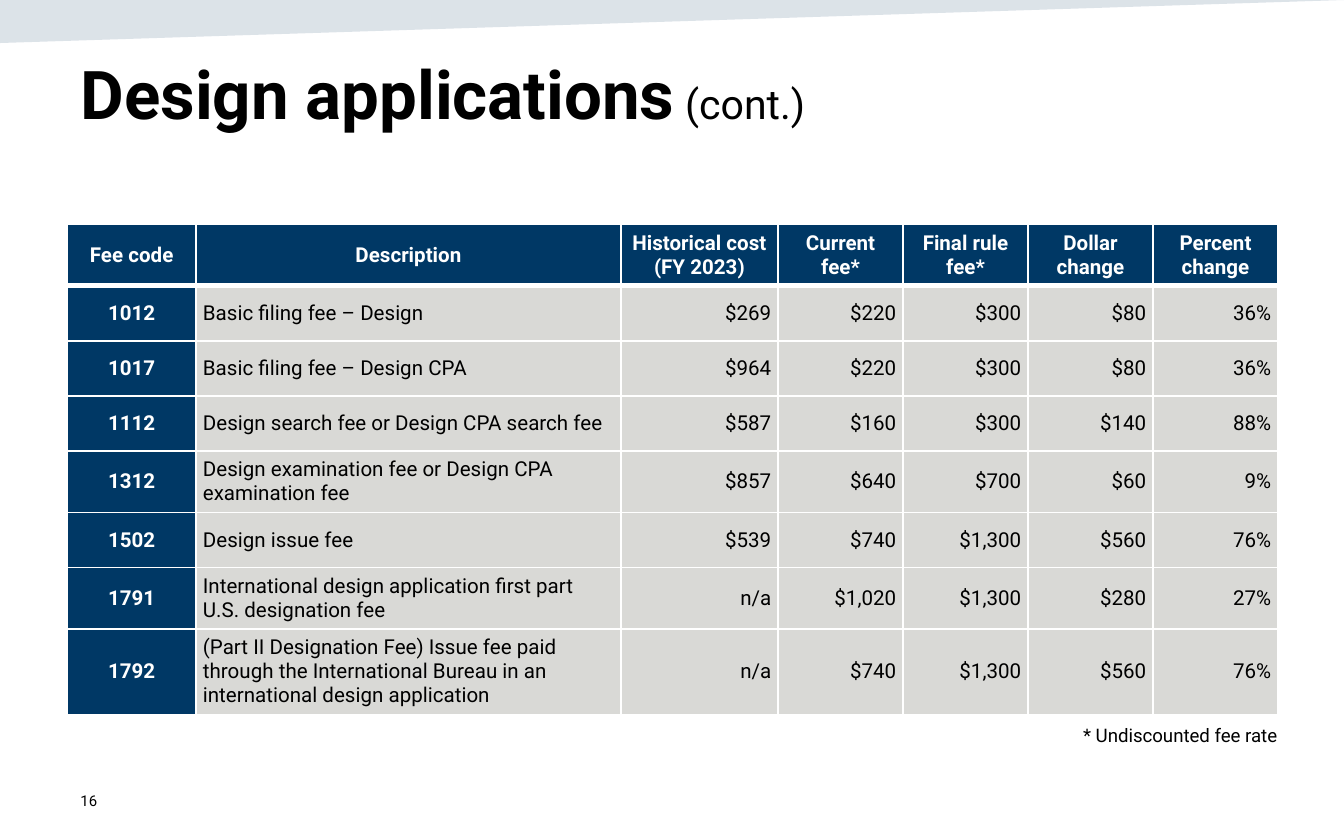
from lxml import etree
from pptx import Presentation
from pptx.dml.color import RGBColor
from pptx.enum.text import MSO_ANCHOR, MSO_AUTO_SIZE, PP_ALIGN
from pptx.oxml import parse_xml
from pptx.oxml.ns import nsdecls, qn
from pptx.util import Inches, Pt

COLORS = {"navy": "003865", "grey": "D9D9D6", "white": "FFFFFF", "black": "000000", "band": "164469"}
LEFT, CENTER, RIGHT = PP_ALIGN.LEFT, PP_ALIGN.CENTER, PP_ALIGN.RIGHT


def add_run(p, text, size, color="black", bold=False):
    r = p.add_run()
    r.text = text
    for name, value in {"name": "Roboto", "size": Pt(size), "bold": bold}.items():
        setattr(r.font, name, value)
    r.font.color.rgb = RGBColor.from_string(COLORS[color])


def add_border(cell, side, width):
    cell._tc.get_or_add_tcPr().append(parse_xml(
        f'<a:ln{side} {nsdecls("a")} w="{Pt(width)}"><a:solidFill>'
        f'<a:srgbClr val="{COLORS["white"]}"/></a:solidFill></a:ln{side}>'))


prs = Presentation()
prs.slide_width, prs.slide_height = Inches(10), Inches(6.25)
s = prs.slides.add_slide(prs.slide_layouts[5])

builder = s.shapes.build_freeform(0, 0, scale=1.0)
builder.add_line_segments([(0, Inches(0.32)), (Inches(10), 0)], close=True)
band = builder.convert_to_shape()
band.shadow.inherit = False
band.fill.solid()
band.fill.fore_color.rgb = RGBColor.from_string(COLORS["band"])
band.line.fill.background()
color = band._element.spPr.find(qn("a:solidFill"))[0]
etree.SubElement(color, qn("a:alpha"), val="15000")

title = s.shapes.title
title.left, title.top, title.width, title.height = [Inches(v) for v in (0.5, 0.34, 9, 1.04)]
tf = title.text_frame
for name, value in {"vertical_anchor": MSO_ANCHOR.TOP, "auto_size": MSO_AUTO_SIZE.NONE, "word_wrap": True}.items():
    setattr(tf, name, value)
p = tf.paragraphs[0]
p.alignment = LEFT
add_run(p, "Design applications", 36, bold=True)
add_run(p, " ", 22, bold=True)
add_run(p, "(cont.)", 22)

rows = [
    ("Fee code", "Description", "Historical cost\n(FY 2023)", "Current fee*", "Final rule fee*",
     "Dollar change", "Percent change"),
    ("1012", "Basic filing fee – Design", "$269", "$220", "$300", "$80", "36%"),
    ("1017", "Basic filing fee – Design CPA", "$964", "$220", "$300", "$80", "36%"),
    ("1112", "Design search fee or Design CPA search fee", "$587", "$160", "$300", "$140", "88%"),
    ("1312", "Design examination fee or Design CPA examination fee", "$857", "$640", "$700", "$60", "9%"),
    ("1502", "Design issue fee", "$539", "$740", "$1,300", "$560", "76%"),
    ("1791", "International design application first part U.S. designation fee",
     "n/a", "$1,020", "$1,300", "$280", "27%"),
    ("1792", "(Part II Designation Fee) Issue fee paid through the International Bureau "
     "in an international design application", "n/a", "$740", "$1,300", "$560", "76%"),
]
widths = [0.96, 3.16, 1.17] + [0.93] * 4
row_height = 0.41
table = s.shapes.add_table(len(rows), len(widths), Inches(0.5), Inches(1.67),
                           Inches(sum(widths)), Inches(row_height * len(rows))).table
for column, width in zip(table.columns, widths):
    column.width = Inches(width)

cell_format = {"vertical_anchor": MSO_ANCHOR.MIDDLE}
cell_format.update({f"margin_{side}": Inches(0.05) for side in ("left", "right", "top", "bottom")})
for i, row in enumerate(rows):
    table.rows[i].height = Inches(row_height)
    for j, text in enumerate(row):
        cell = table.cell(i, j)
        for name, value in cell_format.items():
            setattr(cell, name, value)
        for side in "LRTB":
            add_border(cell, side, 3 if (i, side) in ((0, "B"), (1, "T")) else 1)
        heading = i == 0 or j == 0
        cell.fill.solid()
        cell.fill.fore_color.rgb = RGBColor.from_string(COLORS["navy" if heading else "grey"])
        tf = cell.text_frame
        for k, line in enumerate(text.split("\n")):
            p = tf.add_paragraph() if k else tf.paragraphs[0]
            p.alignment = CENTER if heading else LEFT if j == 1 else RIGHT
            p.space_before = p.space_after = Pt(6 if i else 0)
            add_run(p, line, 11, "white" if heading else "black", heading)

for text, size, align, anchor, box in [
    ("* Undiscounted fee rate", 10, RIGHT, MSO_ANCHOR.TOP, (0.75, 5.34, 8.85, 0.27)),
    ("16", 8, LEFT, MSO_ANCHOR.MIDDLE, (0.5, 5.79, 2.25, 0.33)),
]:
    sp = s.shapes.add_textbox(*[Inches(v) for v in box])
    tf = sp.text_frame
    tf.word_wrap = True
    tf.vertical_anchor = anchor
    p = tf.paragraphs[0]
    p.alignment = align
    add_run(p, text, size)

prs.save("out.pptx")
